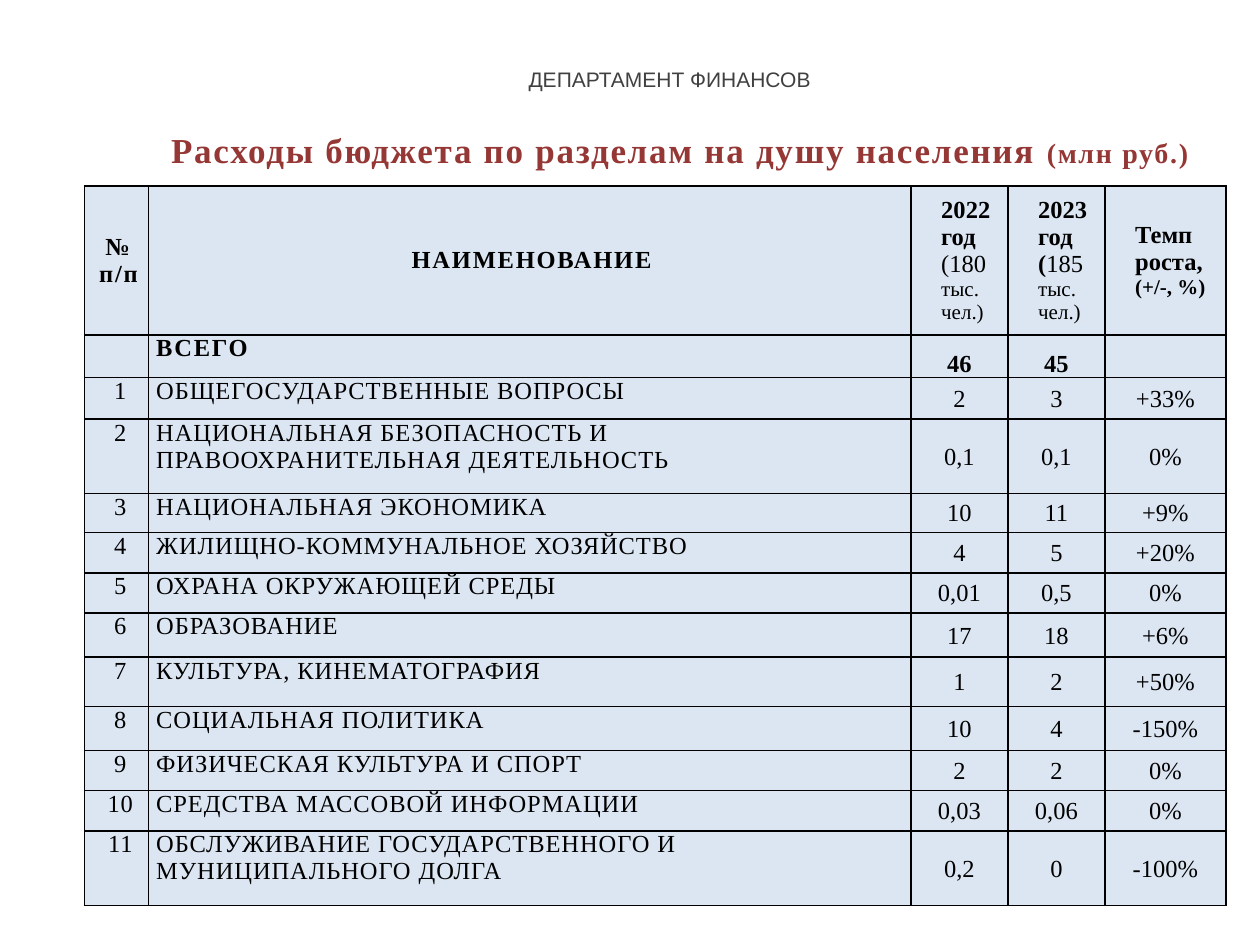
from lxml import etree
from pptx import Presentation
from pptx import util as u
from pptx.dml.color import RGBColor
from pptx.enum import text
from pptx.oxml import ns

WIDTH, HEIGHT = 10, 7.5
SERIF = "Times New Roman"
BLACK, PALE_BLUE, DARK_RED, GREY = "000000", "DCE6F2", "953735", "404040"
LEFT, CENTER = text.PP_ALIGN.LEFT, text.PP_ALIGN.CENTER
TOP, MIDDLE, BOTTOM = text.MSO_ANCHOR.TOP, text.MSO_ANCHOR.MIDDLE, text.MSO_ANCHOR.BOTTOM

COLUMNS = [0.51, 6.05, 0.77, 0.77, 0.96]
ROWS = [1.18, 0.34, 0.33, 0.59, 0.31, 0.32, 0.32, 0.35, 0.39, 0.35, 0.32, 0.32, 0.59]

BOLD = {"bold": True}
SMALL = {"size": 12}
HEADINGS = [
    (CENTER, 0.03, [("№ п/п", {"bold": True, "spacing": 1})]),
    (CENTER, 0.03, [("НАИМЕНОВАНИЕ", {"bold": True, "spacing": 1})]),
    (LEFT, 0.24, [("2022 год ", BOLD), ("(180 ", {}), ("тыс. чел.)", SMALL)]),
    (LEFT, 0.24, [("2023 год (", BOLD), ("185 ", {}), ("тыс. чел.)", SMALL)]),
    (LEFT, 0.24, [("Темп роста, ", BOLD), ("(+/-, %)", {"size": 12, "bold": True})]),
]
TOTAL = ("ВСЕГО", "46", "45", "")
SECTIONS = [
    ("ОБЩЕГОСУДАРСТВЕННЫЕ ВОПРОСЫ", "2", "3", "+33%"),
    ("НАЦИОНАЛЬНАЯ БЕЗОПАСНОСТЬ И ПРАВООХРАНИТЕЛЬНАЯ ДЕЯТЕЛЬНОСТЬ", "0,1", "0,1", "0%"),
    ("НАЦИОНАЛЬНАЯ ЭКОНОМИКА", "10", "11", "+9%"),
    ("ЖИЛИЩНО-КОММУНАЛЬНОЕ ХОЗЯЙСТВО", "4", "5", "+20%"),
    ("ОХРАНА ОКРУЖАЮЩЕЙ СРЕДЫ", "0,01", "0,5", "0%"),
    ("ОБРАЗОВАНИЕ", "17", "18", "+6%"),
    ("КУЛЬТУРА, КИНЕМАТОГРАФИЯ", "1", "2", "+50%"),
    ("СОЦИАЛЬНАЯ ПОЛИТИКА", "10", "4", "-150%"),
    ("ФИЗИЧЕСКАЯ КУЛЬТУРА И СПОРТ", "2", "2", "0%"),
    ("СРЕДСТВА МАССОВОЙ ИНФОРМАЦИИ", "0,03", "0,06", "0%"),
    ("ОБСЛУЖИВАНИЕ ГОСУДАРСТВЕННОГО И МУНИЦИПАЛЬНОГО ДОЛГА", "0,2", "0", "-100%"),
]


def color(value):
    return RGBColor.from_string(value)


def area(left, top, width, height):
    return (u.Inches(left * WIDTH), u.Inches(top * HEIGHT),
            u.Inches(width * WIDTH), u.Inches(height * HEIGHT))


def paint(item, value):
    item.fill.solid()
    item.fill.fore_color.rgb = color(value)


def add_span(para, words, size=14, bold=False, spacing=0, font=SERIF, ink=BLACK):
    span = para.add_run()
    span.text = words
    span.font.name = font
    span.font.size = u.Pt(size)
    span.font.bold = bold
    span.font.color.rgb = color(ink)
    if spacing:
        span._r.get_or_add_rPr().set("spc", str(int(spacing * 100)))


def set_margins(item, side=0, top=0):
    item.margin_left = item.margin_right = u.Inches(side)
    item.margin_top = u.Inches(top)
    item.margin_bottom = 0


def add_borders(cell):
    properties = cell._tc.get_or_add_tcPr()
    for side in ("lnL", "lnR", "lnT", "lnB"):
        line = etree.SubElement(properties, ns.qn(f"a:{side}"), w=str(u.Pt(1)))
        fill = etree.SubElement(line, ns.qn("a:solidFill"))
        etree.SubElement(fill, ns.qn("a:srgbClr"), val=BLACK)


def fill_cell(cell, spans, align=CENTER, anchor=MIDDLE, indent=0, inset=0):
    set_margins(cell, inset, inset)
    cell.vertical_anchor = anchor
    para = cell.text_frame.paragraphs[0]
    para.alignment = align
    para._p.get_or_add_pPr().set("marL", str(u.Inches(indent)))
    for words, style in spans:
        if words:
            add_span(para, words, **style)


def add_title(page):
    title = page.shapes.title
    title.left, title.top, title.width, title.height = area(0.114, 0.132, 0.858, 0.063)
    paint(title, "FFFFFF")
    frame = title.text_frame
    frame.word_wrap = True
    frame.auto_size = text.MSO_AUTO_SIZE.NONE
    frame.vertical_anchor = TOP
    set_margins(frame, top=0.03)
    para = frame.paragraphs[0]
    para.alignment = CENTER
    for words, size in (("Расходы бюджета по разделам на душу населения ", 20), ("(млн руб.) ", 16)):
        add_span(para, words, size, True, 1, ink=DARK_RED)


def add_department(page):
    box = page.shapes.add_textbox(*area(0.327, 0.052, 0.409, 0.063))
    frame = box.text_frame
    frame.word_wrap = True
    frame.vertical_anchor = MIDDLE
    para = frame.paragraphs[0]
    para.alignment = CENTER
    add_span(para, "ДЕПАРТАМЕНТ ФИНАНСОВ", 12, font="Arial", ink=GREY)


def fill_row(table, row, number, record, name_style, value_style, value_anchor):
    name, *values = record
    fill_cell(table.cell(row, 0), [(number, name_style)], CENTER, TOP, 0.06)
    fill_cell(table.cell(row, 1), [(name, name_style)], LEFT, TOP, 0.06)
    for column, value in enumerate(values, 2):
        fill_cell(table.cell(row, column), [(value, value_style)], anchor=value_anchor, inset=0.01)


def add_budget_table(page):
    place = area(0.067, 0.197, sum(COLUMNS) / WIDTH, sum(ROWS) / HEIGHT)
    table = page.shapes.add_table(len(ROWS), len(COLUMNS), *place).table
    table.first_row = table.horz_banding = False
    for column, width in zip(table.columns, COLUMNS):
        column.width = u.Inches(width)
    for row, height in zip(table.rows, ROWS):
        row.height = u.Inches(height)
    for cell in table.iter_cells():
        add_borders(cell)
        paint(cell, PALE_BLUE)
    for column, (align, indent, spans) in enumerate(HEADINGS):
        fill_cell(table.cell(0, column), spans, align, MIDDLE, indent)
    fill_row(table, 1, "", TOTAL, {"bold": True, "spacing": 1}, BOLD, BOTTOM)
    for number, record in enumerate(SECTIONS, 1):
        fill_row(table, number + 1, str(number), record, {"spacing": 0.5}, {}, MIDDLE)


def main():
    deck = Presentation()
    deck.slide_width, deck.slide_height = u.Inches(WIDTH), u.Inches(HEIGHT)
    page = deck.slides.add_slide(deck.slide_layouts[5])
    add_title(page)
    add_department(page)
    add_budget_table(page)
    deck.save("out.pptx")


if __name__ == "__main__":
    main()
